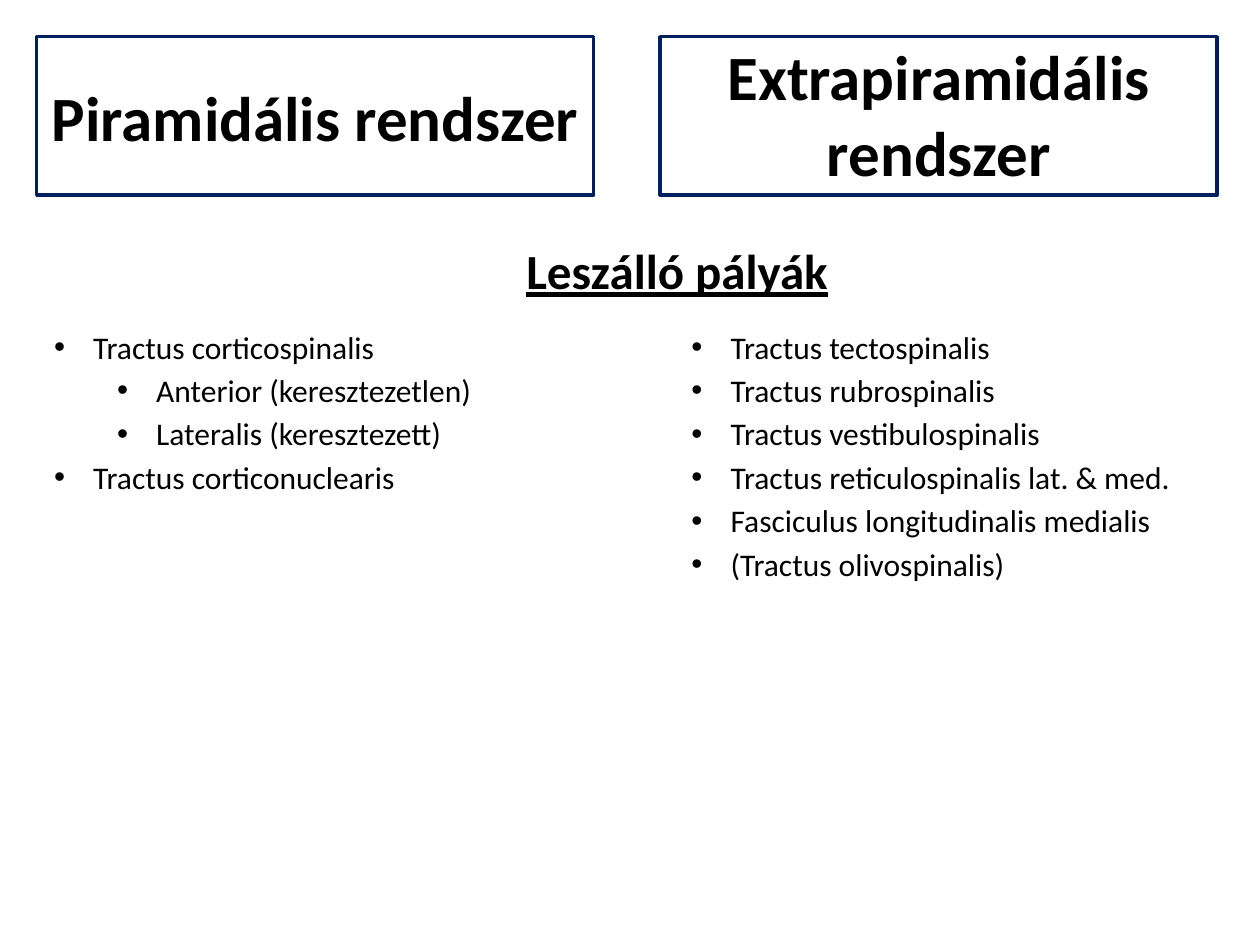
from pptx import Presentation
from pptx.dml.color import RGBColor
from pptx.enum.shapes import MSO_SHAPE
from pptx.enum.text import MSO_ANCHOR, MSO_AUTO_SIZE, PP_ALIGN
from pptx.oxml.ns import qn
from pptx.util import Cm, Pt
from lxml import etree

CENTER, LEFT = PP_ALIGN.CENTER, PP_ALIGN.LEFT
TOP, MIDDLE, BOTTOM = MSO_ANCHOR.TOP, MSO_ANCHOR.MIDDLE, MSO_ANCHOR.BOTTOM
BLACK = RGBColor(0x00, 0x00, 0x00)
NAVY = RGBColor(0x00, 0x20, 0x60)

HEADING = "Leszálló pályák"
COLUMNS = [
    {
        "title": "Piramidális rendszer",
        "anchor": MIDDLE,
        "tracts": [
            (0, "Tractus corticospinalis"),
            (1, "Anterior (keresztezetlen)"),
            (1, "Lateralis (keresztezett)"),
            (0, "Tractus corticonuclearis"),
        ],
    },
    {
        "title": "Extrapiramidális rendszer",
        "anchor": BOTTOM,
        "tracts": [
            (0, "Tractus tectospinalis"),
            (0, "Tractus rubrospinalis"),
            (0, "Tractus vestibulospinalis"),
            (0, "Tractus reticulospinalis lat. & med."),
            (0, "Fasciculus longitudinalis medialis"),
            (0, "(Tractus olivospinalis)"),
        ],
    },
]

BASE_FONT = {"name": "Calibri", "bold": False}
TITLE_FONT = {**BASE_FONT, "size": Pt(36), "bold": True}
HEADING_FONT = {**BASE_FONT, "size": Pt(28), "bold": True, "underline": True}
TRACT_FONT = {**BASE_FONT, "size": Pt(18)}

TITLE_LEFT, TITLE_TOP, TITLE_W, TITLE_H = 0.74, 0.74, 11.23, 3.19
TITLE_STEP = 12.57
LIST_LEFT, LIST_TOP, LIST_W, LIST_H = -0.43, 6.48, 12.85, 1.7
INDENT, LEVEL_STEP, HANGING = 2.06, 1.27, 0.79


def place(sp, left, top, width, height):
    sp.left, sp.top, sp.width, sp.height = map(Cm, (left, top, width, height))


def set_frame(tf, anchor):
    tf.word_wrap = True
    tf.auto_size = MSO_AUTO_SIZE.NONE
    tf.vertical_anchor = anchor


def write(p, text, font, align=LEFT):
    p.alignment = align
    r = p.add_run()
    r.text = text
    for name, value in font.items():
        setattr(r.font, name, value)
    r.font.color.rgb = BLACK


def set_indent(p, margin, hanging=0, bullet=None):
    pPr = p._p.get_or_add_pPr()
    pPr.set("marL", str(Cm(margin)))
    pPr.set("indent", str(-Cm(hanging)))
    if bullet:
        etree.SubElement(pPr, qn("a:buFont")).set("typeface", "Arial")
        etree.SubElement(pPr, qn("a:buChar")).set("char", bullet)


def add_title(s, sp, column, left):
    place(sp, left, TITLE_TOP, TITLE_W, TITLE_H)
    sp.fill.background()
    sp.line.color.rgb = NAVY
    sp.line.width = Pt(2)
    set_frame(sp.text_frame, column["anchor"])
    write(sp.text_frame.paragraphs[0], column["title"], TITLE_FONT, CENTER)


def add_text(s, left, top, width, height):
    tf = s.shapes.add_textbox(*map(Cm, (left, top, width, height))).text_frame
    set_frame(tf, TOP)
    return tf


def add_tracts(s, tracts, left):
    tf = add_text(s, left, LIST_TOP, LIST_W, LIST_H)
    for i, (level, text) in enumerate(tracts):
        p = tf.add_paragraph() if i else tf.paragraphs[0]
        set_indent(p, INDENT + level * LEVEL_STEP, HANGING, "•")
        p.level = level
        if i:
            p.space_before = Pt(3.2)
        write(p, text, TRACT_FONT)


def main():
    prs = Presentation()
    prs.slide_width, prs.slide_height = Cm(25.4), Cm(19.05)
    s = prs.slides.add_slide(prs.slide_layouts[5])

    for i, column in enumerate(COLUMNS):
        if i:
            sp = s.shapes.add_shape(MSO_SHAPE.RECTANGLE, 0, 0, 0, 0)
            sp.shadow.inherit = False
        else:
            sp = s.shapes.title
        add_title(s, sp, column, TITLE_LEFT + i * TITLE_STEP)
        add_tracts(s, column["tracts"], LIST_LEFT + i * LIST_W)

    p = add_text(s, 9.09, 4.72, 9.04, 1.19).paragraphs[0]
    set_indent(p, 1.27)
    write(p, HEADING, HEADING_FONT)

    prs.save("out.pptx")


if __name__ == "__main__":
    main()
